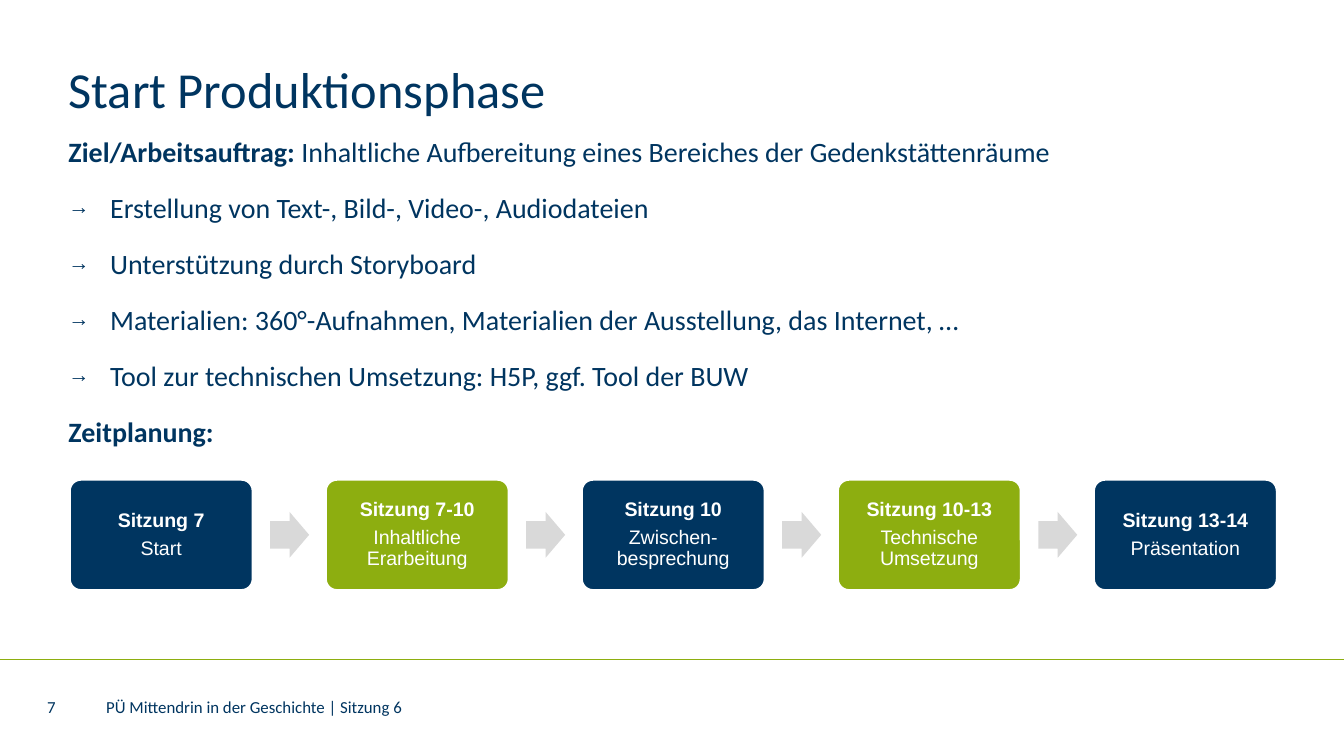
"""Build the slide on the start of the production phase with its session timeline."""
from lxml.etree import SubElement
from pptx import Presentation
from pptx.dml.color import RGBColor
from pptx.enum.shapes import MSO_CONNECTOR, MSO_SHAPE as Shape
from pptx.enum.text import MSO_ANCHOR as Anchor, PP_ALIGN as Align
from pptx.oxml.ns import qn
from pptx.util import Inches, Pt

NAVY = RGBColor(0x00, 0x35, 0x60)
GREEN = RGBColor(0x8D, 0xAE, 0x10)
GREY = RGBColor(0xD9, 0xD9, 0xD9)
WHITE = RGBColor(0xFF, 0xFF, 0xFF)

TITLE = "Start Produktionsphase"
GOAL = ("Ziel/Arbeitsauftrag: ", "Inhaltliche Aufbereitung eines Bereiches der Gedenkstättenräume")
TASKS = [
    "Erstellung von Text-, Bild-, Video-, Audiodateien",
    "Unterstützung durch Storyboard",
    "Materialien: 360°-Aufnahmen, Materialien der Ausstellung, das Internet, …",
    "Tool zur technischen Umsetzung: H5P, ggf. Tool der BUW",
]
SCHEDULE = "Zeitplanung:"
PAGE_NUMBER = "7"
FOOTER = "PÜ Mittendrin in der Geschichte | Sitzung 6"
SESSIONS = [
    ("Sitzung 7", "Start"),
    ("Sitzung 7-10", "Inhaltliche Erarbeitung"),
    ("Sitzung 10", "Zwischen-besprechung"),
    ("Sitzung 10-13", "Technische Umsetzung"),
    ("Sitzung 13-14", "Präsentation"),
]

FIRST_LEFT, LAST_LEFT = 0.52, 8.14
PITCH = (LAST_LEFT - FIRST_LEFT) / (len(SESSIONS) - 1)
BOX_TOP, BOX_WIDTH, BOX_HEIGHT = 3.57, 1.36, 0.82
ARROW_OFFSET, ARROW_WIDTH, ARROW_HEIGHT = 1.49, 0.29, 0.34


def set_margins(text_frame, margin):
    text_frame.margin_left = text_frame.margin_right = Inches(margin)
    text_frame.margin_top = text_frame.margin_bottom = Inches(margin)


def format_run(run, size, color=NAVY, bold=False, name="Calibri"):
    font = run.font
    font.name, font.size, font.bold = name, Pt(size), bold
    font.color.rgb = color


def add_text_box(slide, left, top, width, height, anchor=Anchor.TOP):
    box = slide.shapes.add_textbox(Inches(left), Inches(top), Inches(width), Inches(height))
    text_frame = box.text_frame
    text_frame.word_wrap = True
    text_frame.vertical_anchor = anchor
    set_margins(text_frame, 0)
    return text_frame


def add_label(slide, text, size, *place, anchor=Anchor.TOP):
    text_frame = add_text_box(slide, *place, anchor=anchor)
    text_frame.text = text
    format_run(text_frame.paragraphs[0].runs[0], size)


def add_arrow_bullet(paragraph):
    properties = paragraph._p.get_or_add_pPr()
    properties.set("marL", str(Inches(0.31)))
    properties.set("indent", str(-Inches(0.31)))
    SubElement(properties, qn("a:buSzPct")).set("val", "75000")
    SubElement(properties, qn("a:buFont")).set("typeface", "Arial")
    SubElement(properties, qn("a:buChar")).set("char", "→")


def add_body(slide):
    text_frame = add_text_box(slide, 0.51, 1, 8.27, 3.68)
    text_frame.text = "\n".join([GOAL[0], *TASKS, SCHEDULE])
    for paragraph in text_frame.paragraphs:
        is_task = paragraph.text in TASKS
        if is_task:
            add_arrow_bullet(paragraph)
        paragraph.line_spacing = Pt(18)
        paragraph.space_after = Pt(12)
        format_run(paragraph.runs[0], 15, bold=not is_task)
    description = text_frame.paragraphs[0].add_run()
    description.text = GOAL[1]
    format_run(description, 15)


def add_filled_shape(slide, kind, color, left, top, width, height):
    shape = slide.shapes.add_shape(kind, Inches(left), Inches(top), Inches(width), Inches(height))
    shape.shadow.inherit = False
    shape.fill.solid()
    shape.fill.fore_color.rgb = color
    return shape


def add_session(slide, left, color, texts):
    box = add_filled_shape(slide, Shape.ROUNDED_RECTANGLE, color, left, BOX_TOP, BOX_WIDTH, BOX_HEIGHT)
    box.adjustments[0] = 0.1
    box.line.color.rgb = WHITE
    box.line.width = Pt(1)
    text_frame = box.text_frame
    text_frame.word_wrap = True
    text_frame.vertical_anchor = Anchor.MIDDLE
    set_margins(text_frame, 0.08)
    text_frame.text = "\n".join(texts)
    for index, paragraph in enumerate(text_frame.paragraphs):
        paragraph.alignment = Align.CENTER
        paragraph.line_spacing = 0.9
        paragraph.space_after = Pt(3.7)
        format_run(paragraph.runs[0], 10.5, WHITE, index == 0, "Arial")


def add_timeline(slide):
    arrow_top = BOX_TOP + (BOX_HEIGHT - ARROW_HEIGHT) / 2
    for index, texts in enumerate(SESSIONS):
        left = FIRST_LEFT + index * PITCH
        add_session(slide, left, GREEN if index % 2 else NAVY, texts)
        if index < len(SESSIONS) - 1:
            arrow = add_filled_shape(slide, Shape.RIGHT_ARROW, GREY, left + ARROW_OFFSET,
                                     arrow_top, ARROW_WIDTH, ARROW_HEIGHT)
            arrow.adjustments[0] = 0.6
            arrow.line.fill.background()


def add_footer(slide):
    rule = slide.shapes.add_connector(MSO_CONNECTOR.STRAIGHT, 0, Inches(4.91), Inches(10), Inches(4.91))
    rule.line.color.rgb = GREEN
    rule.line.width = Pt(0.5)
    SubElement(rule._element.spPr, qn("a:effectLst"))
    add_label(slide, PAGE_NUMBER, 9, 0.35, 5.2, 0.28, 0.12, anchor=Anchor.MIDDLE)
    add_label(slide, FOOTER, 9, 0.79, 5.2, 6.02, 0.12, anchor=Anchor.MIDDLE)


def main():
    presentation = Presentation()
    presentation.slide_width = Inches(10)
    presentation.slide_height = presentation.slide_width * 9 // 16
    slide = presentation.slides.add_slide(presentation.slide_layouts[6])
    add_label(slide, TITLE, 27, 0.51, 0.43, 8.27, 0.51)
    add_body(slide)
    add_timeline(slide)
    add_footer(slide)
    presentation.save("out.pptx")


if __name__ == "__main__":
    main()
